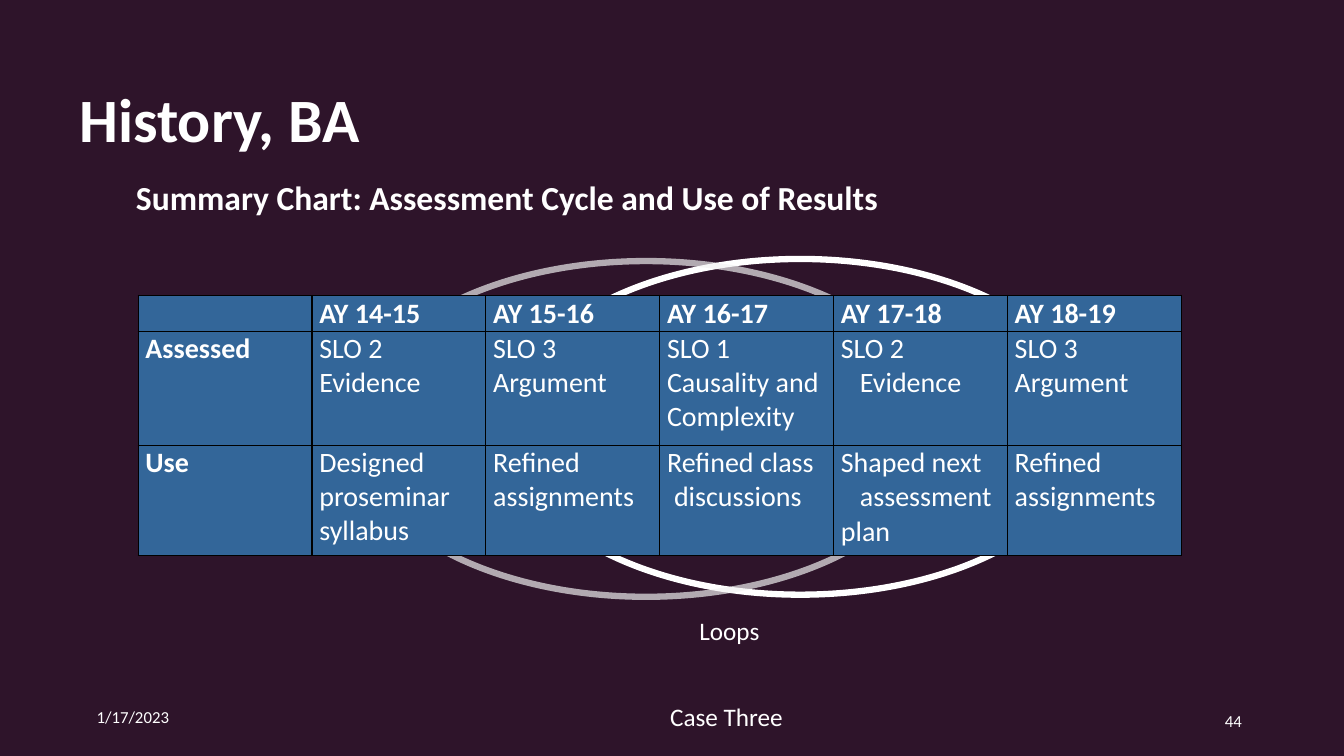
from pptx import Presentation
from pptx.dml.color import RGBColor
from pptx.enum import shapes, text
from pptx.oxml import parse_xml
from pptx.oxml.ns import nsdecls, qn
from pptx.util import Pt

HUES = {"back": "2E142A", "cell": "336699", "ink": "FFFFFF", "pale": "F2F2F2", "edge": "000000"}
FACE = "Calibri"
ALIGN = text.PP_ALIGN
ANCHOR = text.MSO_ANCHOR

LOOPS = [
    {"left": 361.4, "top": 185, "hue": "ink", "alpha": 100},
    {"left": 251.3, "top": 186.5, "hue": "pale", "alpha": 67},
]
LOOP_W, LOOP_H, LOOP_LINE = 420.5, 239.8, 4.5

LABELS = [
    ("History, BA", (49.7, 0, 710.6, 113.8), 44, True, {}, {"vertical_anchor": ANCHOR.BOTTOM}),
    ("Summary Chart: Assessment Cycle and Use of Results", (90, 121, 620.6, 36.7), 24, True,
     {"alignment": ALIGN.JUSTIFY, "line_spacing": 1.07}, {}),
    ("Loops", (492.5, 436.3, 133.9, 28.8), 18, False, {}, {}),
    ("Case Three", (471.6, 497.5, 295.9, 28.8), 18, False, {}, {}),
    ("1/17/2023", (61.9, 497.5, 216, 28.8), 12, False, {}, {"vertical_anchor": ANCHOR.MIDDLE}),
    ("44", (678.2, 500.4, 216, 28.8), 12, False, {"alignment": ALIGN.RIGHT},
     {"vertical_anchor": ANCHOR.MIDDLE}),
]

YEARS = ["", "AY 14-15", "AY 15-16", "AY 16-17", "AY 17-18", "AY 18-19"]
TESTED = ["Assessed", "SLO 2 Evidence", "SLO 3 Argument", "SLO 1 Causality and Complexity",
          [("SLO 2", 0), ("Evidence", 13.6)], "SLO 3 Argument"]
USED = ["Use", "Designed proseminar syllabus", "Refined assignments",
        [("Refined class", 0), ("discussions", 5)],
        [("Shaped next", 0), ("assessment", 13.6), ("plan", 0)], "Refined assignments"]
GRID = [YEARS, TESTED, USED]
GRID_AT = (98.7, 210.8)
COL_W = 124.2
ROW_H = [26, 81.5, 78.5]
PAD = {"margin_left": Pt(5.2), "margin_right": Pt(5.2), "margin_top": 0, "margin_bottom": 0}


def tint(name):
    return RGBColor.from_string(HUES[name])


def apply(item, style):
    for key, value in style.items():
        setattr(item, key, value)


def write(para, words, size, bold, style):
    run = para.add_run()
    run.text = words
    apply(run.font, {"name": FACE, "size": Pt(size), "bold": bold})
    run.font.color.rgb = tint("ink")
    apply(para, style)


def add_loop(slide, loop):
    ring = slide.shapes.add_shape(shapes.MSO_SHAPE.OVAL, Pt(loop["left"]), Pt(loop["top"]),
                                  Pt(LOOP_W), Pt(LOOP_H))
    ring.shadow.inherit = False
    ring.fill.background()
    ring.line.width = Pt(LOOP_LINE)
    ring.line.color.rgb = tint(loop["hue"])
    if loop["alpha"] < 100:
        color = next(ring.line._get_or_add_ln().iter(qn("a:srgbClr")))
        color.append(parse_xml(f'<a:alpha {nsdecls("a")} val="{loop["alpha"] * 1000}"/>'))


def add_label(slide, words, box, size, bold, style, frame):
    body = slide.shapes.add_textbox(*map(Pt, box)).text_frame
    apply(body, {"word_wrap": True, **frame})
    write(body.paragraphs[0], words, size, bold, style)


def fill_cell(cell, entry, bold, style):
    apply(cell, PAD)
    lines = [(entry, 0)] if isinstance(entry, str) else entry
    body = cell.text_frame
    for i, (words, indent) in enumerate(lines):
        para = body.add_paragraph() if i else body.paragraphs[0]
        if words:
            write(para, words, 20, bold, style)
        if indent:
            para._p.get_or_add_pPr().set("marL", str(Pt(indent)))
    props = cell._tc.get_or_add_tcPr()
    for side in ("lnL", "lnR", "lnT", "lnB"):
        props.append(parse_xml(
            f'<a:{side} {nsdecls("a")} w="{Pt(1)}"><a:solidFill>'
            f'<a:srgbClr val="{HUES["edge"]}"/></a:solidFill></a:{side}>'))
    cell.fill.solid()
    cell.fill.fore_color.rgb = tint("cell")


def add_grid(slide):
    cols = len(YEARS)
    table = slide.shapes.add_table(len(GRID), cols, *map(Pt, GRID_AT),
                                   Pt(COL_W * cols), Pt(sum(ROW_H))).table
    for col in table.columns:
        col.width = Pt(COL_W)
    for r, row in enumerate(GRID):
        table.rows[r].height = Pt(ROW_H[r])
        style = {"space_after": Pt(0.2), "line_spacing": 1 if r else 1.04}
        for c, entry in enumerate(row):
            fill_cell(table.cell(r, c), entry, r == 0 or c == 0, style)


def main():
    """Build the slide that sums up the assessment cycle."""
    deck = Presentation()
    apply(deck, {"slide_width": Pt(960), "slide_height": Pt(540)})
    slide = deck.slides.add_slide(deck.slide_layouts[6])
    slide.background.fill.solid()
    slide.background.fill.fore_color.rgb = tint("back")
    for loop in LOOPS:
        add_loop(slide, loop)
    add_grid(slide)
    for label in LABELS:
        add_label(slide, *label)
    deck.save("out.pptx")


if __name__ == "__main__":
    main()
